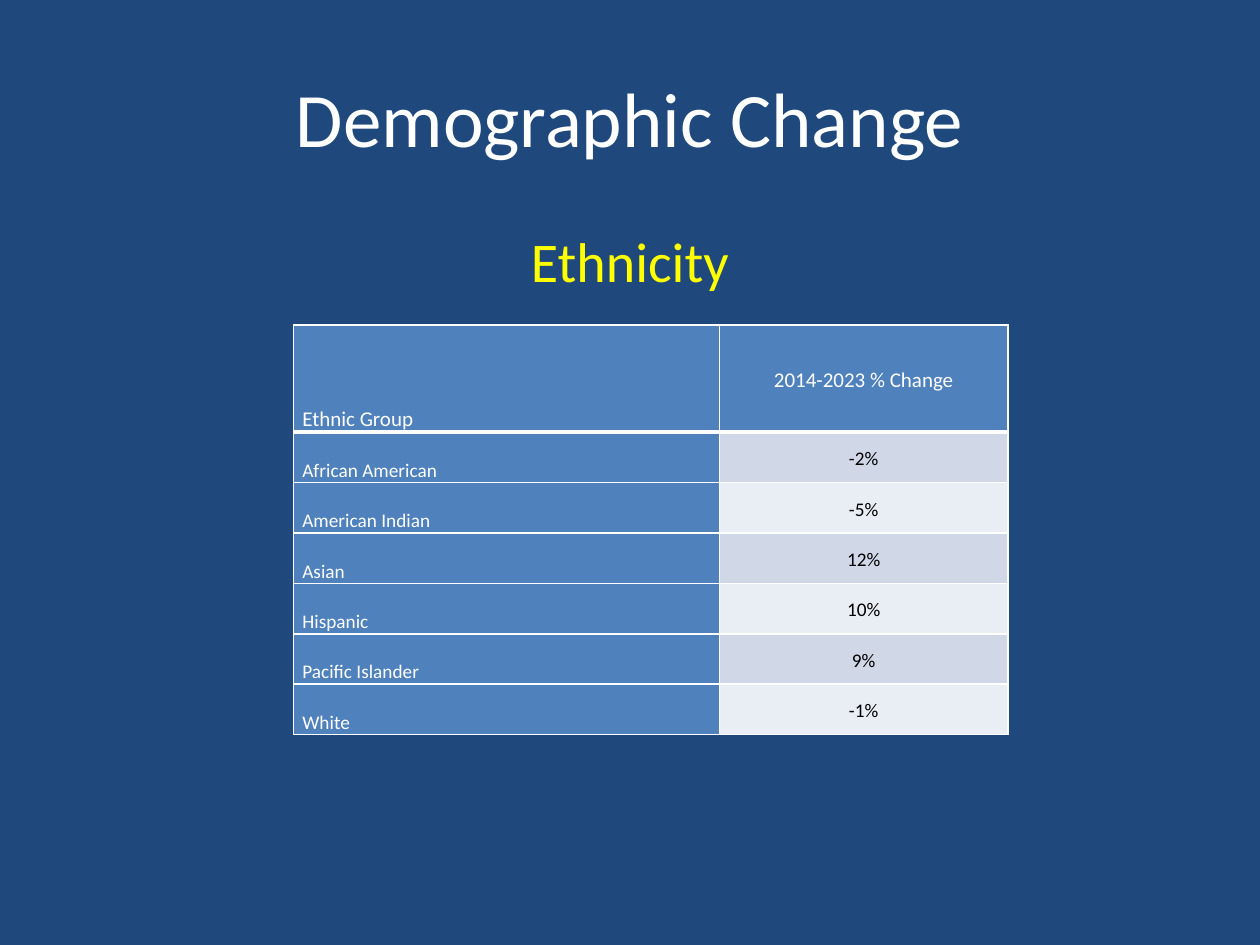
from dataclasses import dataclass

from lxml import etree
from pptx import Presentation
from pptx import util as u
from pptx.dml import color
from pptx.enum import text
from pptx.oxml import ns

WHITE, BLACK, YELLOW = "FFFFFF", "000000", "FFFF00"
NAVY, BLUE = "1F497D", "4F81BD"
BANDS = ("D0D8E8", "E9EDF4")
CENTER, LEFT = text.PP_ALIGN.CENTER, text.PP_ALIGN.LEFT
MIDDLE, BOTTOM = text.MSO_ANCHOR.MIDDLE, text.MSO_ANCHOR.BOTTOM


@dataclass
class TextStyle:
    size: int
    color: str
    alignment: text.PP_ALIGN = CENTER
    anchor: text.MSO_ANCHOR = MIDDLE


@dataclass
class EthnicGroup:
    name: str
    change: str


GROUPS = [
    EthnicGroup("African American", "-2%"),
    EthnicGroup("American Indian", "-5%"),
    EthnicGroup("Asian", "12%"),
    EthnicGroup("Hispanic", "10%"),
    EthnicGroup("Pacific Islander", "9%"),
    EthnicGroup("White", "-1%"),
]


def rgb(value: str) -> color.RGBColor:
    return color.RGBColor.from_string(value)


def set_attributes(target, values: dict) -> None:
    for name, value in values.items():
        setattr(target, name, value)


def write_text(frame, wording: str, style: TextStyle):
    paragraph = frame.paragraphs[0]
    paragraph.alignment = style.alignment
    run = paragraph.add_run()
    run.text = wording
    set_attributes(run.font, {"name": "Calibri", "size": u.Pt(style.size), "bold": False})
    run.font.color.rgb = rgb(style.color)
    return paragraph


def fill_placeholder(shape, box: tuple, wording: str, style: TextStyle):
    lengths = (u.Inches(value) for value in box)
    set_attributes(shape, dict(zip(("left", "top", "width", "height"), lengths)))
    shape.text_frame.vertical_anchor = style.anchor
    return write_text(shape.text_frame, wording, style)


def add_borders(cell, bottom: int) -> None:
    properties = cell._tc.get_or_add_tcPr()
    for side, points in {"L": 1, "R": 1, "T": 1, "B": bottom}.items():
        line = etree.SubElement(properties, ns.qn(f"a:ln{side}"), w=str(u.Pt(points)))
        fill = etree.SubElement(line, ns.qn("a:solidFill"))
        etree.SubElement(fill, ns.qn("a:srgbClr"), val=WHITE)


def fill_cell(cell, wording: str, style: TextStyle, fill: str, bottom: int = 1) -> None:
    add_borders(cell, bottom)
    cell.fill.solid()
    cell.fill.fore_color.rgb = rgb(fill)
    side = u.Inches(0.07)
    set_attributes(cell, {
        "margin_left": side, "margin_right": side,
        "margin_top": 0, "margin_bottom": 0,
        "vertical_anchor": style.anchor,
    })
    write_text(cell.text_frame, wording, style).line_spacing = 1.15


def add_change_table(slide) -> None:
    frame = slide.shapes.add_table(
        len(GROUPS) + 1, 2, u.Inches(2.33), u.Inches(2.58), u.Inches(5.67), u.Inches(3.25))
    table = frame.table
    for column, width in zip(table.columns, (3.38, 2.29)):
        column.width = u.Inches(width)
    for index, row in enumerate(table.rows):
        row.height = u.Inches(0.4 if index else 0.85)
    fill_cell(table.cell(0, 0), "Ethnic Group", TextStyle(12, WHITE, LEFT, BOTTOM), BLUE, 3)
    fill_cell(table.cell(0, 1), "2014-2023 % Change", TextStyle(12, WHITE), BLUE, 3)
    for index, group in enumerate(GROUPS):
        name, change = table.rows[index + 1].cells
        fill_cell(name, group.name, TextStyle(11, WHITE, LEFT, BOTTOM), BLUE)
        fill_cell(change, group.change, TextStyle(11, BLACK), BANDS[index % 2])


def main() -> None:
    presentation = Presentation()
    set_attributes(presentation, {"slide_width": u.Inches(10), "slide_height": u.Inches(7.5)})
    slide = presentation.slides.add_slide(presentation.slide_layouts[1])
    slide.background.fill.solid()
    slide.background.fill.fore_color.rgb = rgb(NAVY)

    title, body = slide.placeholders
    fill_placeholder(title, (0.5, 0.3, 9, 1.25), "Demographic Change", TextStyle(44, WHITE))
    subtitle = fill_placeholder(body, (0.5, 1.75, 9, 4.95), "Ethnicity",
                                TextStyle(32, YELLOW, anchor=text.MSO_ANCHOR.TOP))
    properties = subtitle._p.get_or_add_pPr()
    properties.set("marL", "0")
    properties.set("indent", "0")
    etree.SubElement(properties, ns.qn("a:buNone"))

    add_change_table(slide)
    presentation.save("out.pptx")


if __name__ == "__main__":
    main()
